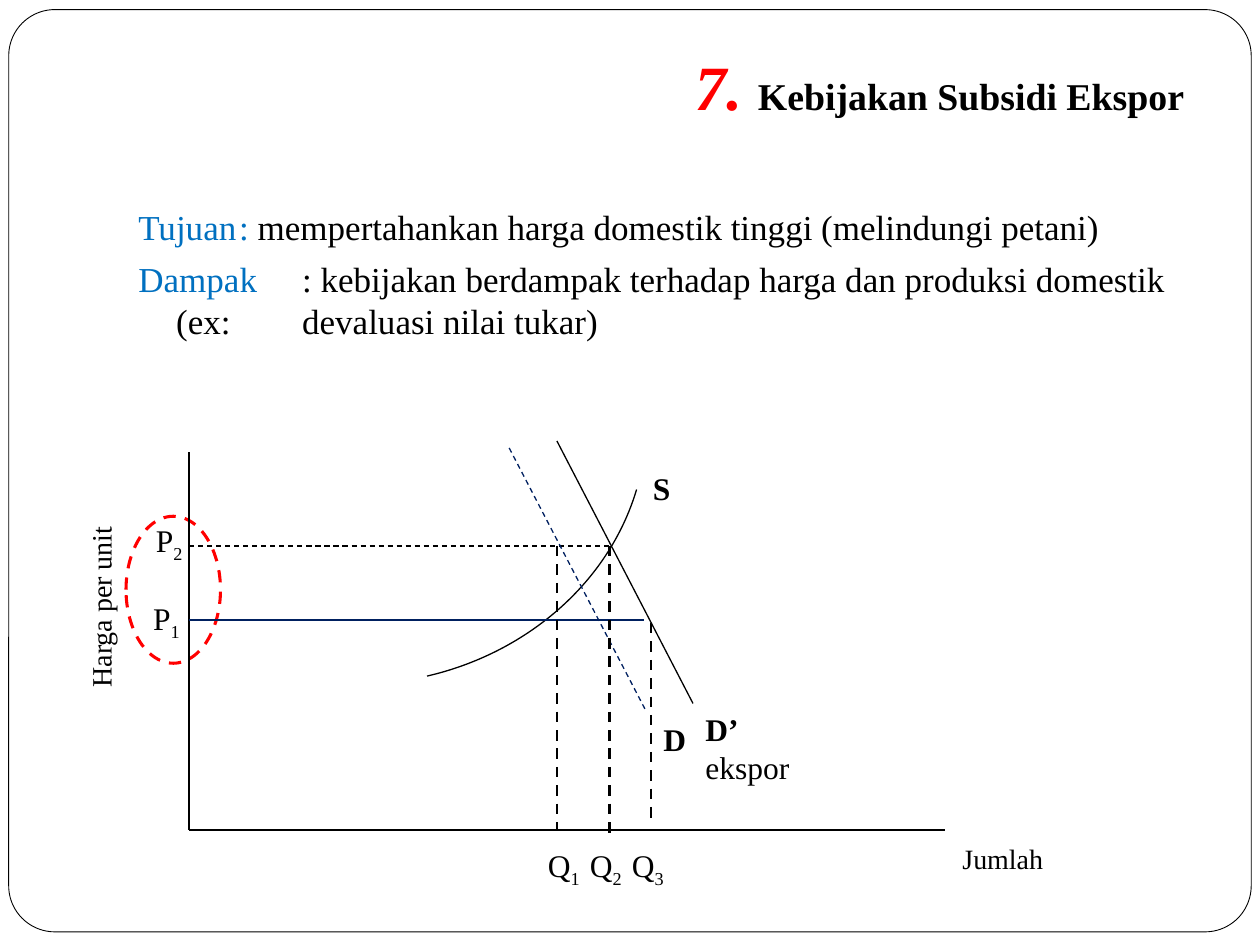
import pptx
import pptx.util
import pptx.dml.color
import pptx.enum.dml
import pptx.enum.shapes
import pptx.enum.text
import pptx.oxml
import pptx.oxml.ns

Pt = pptx.util.Pt
Shape = pptx.enum.shapes.MSO_SHAPE
Align = pptx.enum.text.PP_ALIGN
Anchor = pptx.enum.text.MSO_ANCHOR
FONT = "Times New Roman"
COLORS = {"black": "000000", "red": "FF0000", "blue": "0070C0", "navy": "002060"}

# Content: each run is (text, format)
TITLE = [("7. ", {"size": 36, "bold": True, "italic": True, "color": "red"}),
         ("Kebijakan Subsidi Ekspor", {"size": 21.6, "bold": True, "italic": False})]
BODY = [
    [("Tujuan\t: ", {"size": 20, "color": "blue"}),
     ("mempertahankan harga domestik tinggi (melindungi petani)", {"size": 20})],
    [("Dampak", {"size": 20, "color": "blue"}),
     ("\t: kebijakan berdampak terhadap harga dan produksi domestik (ex:\t\tdevaluasi nilai tukar)",
      {"size": 20})],
]
HANGING = 21.6
TAB_STOPS = (93.6, 165.6)

# Chart geometry: origin, price levels and quantities
X0, Y0 = 108, 474.25
P1, P2 = 354.25, 312
Q1, Q2, Q3 = 318.25, 348.25, 372
LINES = [  # from, to, colour, width, dashed
    ((X0, 258.5), (X0, Y0), "black", 0.75, False),
    ((X0, Y0), (540, Y0), "black", 0.75, False),
    ((X0, P2), (Q2, P2), "black", 0.75, True),
    ((X0, P1), (368, P1), "navy", 0.75, False),
    ((Q1, 252), (396, 402), "black", 0.75, False),
    ((291, 256), (369, 406), "navy", 0.75, True),
    ((Q1, P2), (Q1, Y0), "black", 1.5, True),
    ((Q2, P2), (Q2, 477), "black", 1.5, True),
    ((Q3, 356), (Q3, 471.5), "black", 1.5, True),
]
OUTLINES = [  # shape, box, rotation, adjustments, colour, width, dashed
    (Shape.ROUNDED_RECTANGLE, (5, 5.5, 710, 527), 0, (0.05,), "black", 0.5, False),
    (Shape.ARC, (60.5, 82, 291.6, 326.2), 84.5, (172.74, 210.33), "black", 0.75, False),
    (Shape.OVAL, (72, 295, 54, 84), 0, (), "red", 1.75, True),
]
LABELS = [  # left, top, width, bold text, plain text
    (366, 264.3, 24, "S", ""),
    (396, 402, 66, "D’ ", "ekspor"),
    (372, 408, 42, "D", ""),
]
INDEXED = [  # left, top, letter, index
    (80.5, 339, "P", "1"), (82, 294, "P", "2"),
    (306, 480, "Q", "1"), (330, 480, "Q", "2"), (354, 480, "Q", "3"),
]
AXIS_TITLES = [  # left, top, width, text, rotation
    (528, 477.5, 90, "Jumlah", 0),
    (-5.5, 333.5, 126, "Harga per unit", 270),
]


def rgb(name):
    return pptx.dml.color.RGBColor.from_string(COLORS[name])


def set_all(target, values):
    for name, value in values.items():
        setattr(target, name, value)


def add_runs(paragraph, runs):
    for text, style in runs:
        style = dict(style)
        color, baseline = style.pop("color", "black"), style.pop("baseline", None)
        run = paragraph.add_run()
        run.text = text
        set_all(run.font, {"name": FONT, **style, "size": Pt(style["size"])})
        run.font.color.rgb = rgb(color)
        if baseline:
            run.font._element.set("baseline", str(baseline))


def add_text(slide, box, paragraphs, align=Align.LEFT, rotation=0):
    area = slide.shapes.add_textbox(*map(Pt, box))
    area.rotation = rotation
    frame = area.text_frame
    frame.word_wrap = True
    for i, runs in enumerate(paragraphs):
        paragraph = frame.add_paragraph() if i else frame.paragraphs[0]
        paragraph.alignment = align
        add_runs(paragraph, runs)
    return frame


def style_line(line, color, width, dashed):
    line.color.rgb = rgb(color)
    line.width = Pt(width)
    if dashed:
        line.dash_style = pptx.enum.dml.MSO_LINE.DASH


def hang(paragraph):
    paragraph.space_before = Pt(5.8)
    props = paragraph._p.get_or_add_pPr()
    props.set("marL", str(Pt(HANGING)))
    props.set("indent", str(-Pt(HANGING)))
    tabs = pptx.oxml.parse_xml(
        f"<a:tabLst {pptx.oxml.ns.nsdecls('a')}>"
        + "".join(f'<a:tab pos="{Pt(stop)}" algn="l"/>' for stop in TAB_STOPS)
        + "</a:tabLst>")
    props.append(tabs)


def main():
    deck = pptx.Presentation()
    set_all(deck, {"slide_width": Pt(720), "slide_height": Pt(540)})
    slide = deck.slides.add_slide(deck.slide_layouts[5])

    # Title
    title = slide.shapes.title
    set_all(title, {"left": Pt(72), "top": Pt(21.6), "width": Pt(612), "height": Pt(56.2)})
    set_all(title.text_frame, {"vertical_anchor": Anchor.BOTTOM, "word_wrap": True,
                               "margin_bottom": Pt(7.2)})
    heading = title.text_frame.paragraphs[0]
    heading.alignment = Align.RIGHT
    add_runs(heading, TITLE)

    # Purpose and impact
    for paragraph in add_text(slide, (72, 113.8, 612, 360), BODY).paragraphs:
        hang(paragraph)

    # Frame, supply curve and price marker
    for kind, box, rotation, adjustments, *stroke in OUTLINES:
        outline = slide.shapes.add_shape(kind, *map(Pt, box))
        outline.rotation = rotation
        outline.shadow.inherit = False
        outline.fill.background()
        for i, value in enumerate(adjustments):
            outline.adjustments[i] = value
        style_line(outline.line, *stroke)

    # Axes, demand lines and guides
    for start, end, *stroke in LINES:
        line = slide.shapes.add_connector(
            pptx.enum.shapes.MSO_CONNECTOR.STRAIGHT, *map(Pt, start + end))
        style_line(line.line, *stroke)
        line._element.spPr.append(
            pptx.oxml.parse_xml(f"<a:effectLst {pptx.oxml.ns.nsdecls('a')}/>"))

    # Labels
    for left, top, width, strong, plain in LABELS:
        runs = [(strong, {"size": 18, "bold": True})]
        if plain:
            runs.append((plain, {"size": 18}))
        add_text(slide, (left, top, width, 51 if plain else 29), [runs])
    for left, top, letter, index in INDEXED:
        add_text(slide, (left, top, 36, 29),
                 [[(letter, {"size": 18}), (index, {"size": 18, "baseline": -25000})]])
    for left, top, width, text, rotation in AXIS_TITLES:
        add_text(slide, (left, top, width, 26.6), [[(text, {"size": 16})]],
                 Align.CENTER, rotation)

    deck.save("out.pptx")


if __name__ == "__main__":
    main()
